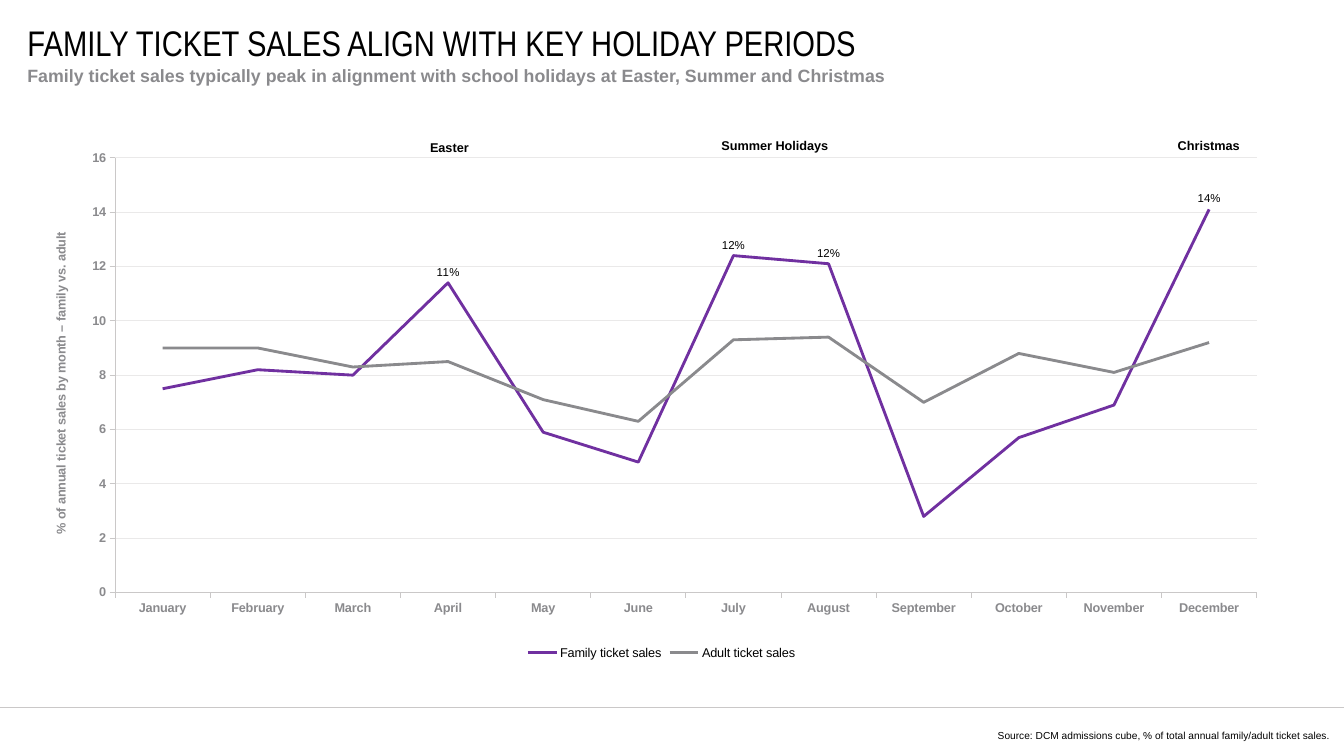
from dataclasses import dataclass

from lxml import etree
from pptx import Presentation
from pptx import util as u
from pptx.chart.data import CategoryChartData
from pptx.dml.color import RGBColor
from pptx.enum import chart as charts, shapes, text
from pptx.oxml import parse_xml
from pptx.oxml.ns import nsdecls, qn


@dataclass(frozen=True)
class Theme:
    black: str = "000000"
    grey: str = "8A8A8D"
    purple: str = "7030A0"
    rule: str = "CAC8C8"
    grid: str = "EAE9E9"
    body_font: str = "Arial"
    title_font: str = "Arial Narrow"
    title: float = 28
    subtitle: float = 14
    label: float = 10
    point_label: float = 9
    source: float = 8


THEME = Theme()
WIDTH, HEIGHT = 1058.4, 595.44
MARGIN = 21.6

MONTHS = ["January", "February", "March", "April", "May", "June", "July",
          "August", "September", "October", "November", "December"]
SALES = {
    "Family ticket sales": (
        THEME.purple, [7.5, 8.2, 8, 11.4, 5.9, 4.8, 12.4, 12.1, 2.8, 5.7, 6.9, 14.1]),
    "Adult ticket sales": (
        THEME.grey, [9, 9, 8.3, 8.5, 7.1, 6.3, 9.3, 9.4, 7, 8.8, 8.1, 9.2]),
}
PEAK_MONTHS = ["April", "July", "August", "December"]
# text, left, top, width
HOLIDAYS = [("Easter", 328.3, 106.6, 51.1),
            ("Summer Holidays", 552.2, 105.1, 115.9),
            ("Christmas", 914.4, 105.1, 74.9)]


def style_font(font, size=THEME.label, color=THEME.black, bold=False,
               name=THEME.body_font):
    font.size = u.Pt(size)
    font.name = name
    font.bold = bold
    font.color.rgb = RGBColor.from_string(color)


def style_line(line, color, width):
    line.color.rgb = RGBColor.from_string(color)
    line.width = u.Pt(width)


def write_text(frame, content, align=text.PP_ALIGN.LEFT,
               anchor=text.MSO_ANCHOR.TOP, spacing=None, wrap=True,
               inset=(0, 0), **font):
    """Fill a text frame with one paragraph; inset is (sides, top and bottom)."""
    frame.auto_size = text.MSO_AUTO_SIZE.NONE
    frame.word_wrap = wrap
    frame.vertical_anchor = anchor
    frame.margin_left = frame.margin_right = u.Pt(inset[0])
    frame.margin_top = frame.margin_bottom = u.Pt(inset[1])
    para = frame.paragraphs[0]
    para.alignment = align
    if spacing:
        para.line_spacing = u.Pt(spacing)
    span = para.add_run()
    span.text = content
    style_font(span.font, **font)


def place_plot(chart, **edges):
    """Fix the inner plot area, in fractions of the chart."""
    plot_area = chart._chartSpace.chart.plotArea
    for layout in plot_area.findall(qn("c:layout")):
        plot_area.remove(layout)
    modes = '<c:xMode val="edge"/><c:yMode val="edge"/>'
    sizes = "".join(f'<c:{key} val="{value}"/>' for key, value in edges.items())
    plot_area.insert(0, parse_xml(
        f'<c:layout {nsdecls("c")}><c:manualLayout><c:layoutTarget val="inner"/>'
        f"{modes}{sizes}</c:manualLayout></c:layout>"))


class SlideBuilder:
    def __init__(self, deck, theme):
        self.theme = theme
        self.page = deck.slides.add_slide(deck.slide_layouts[5])

    def title(self, content, left, top, width, height):
        box = self.page.shapes.title
        box.left, box.top, box.width, box.height = map(
            u.Pt, (left, top, width, height))
        write_text(box.text_frame, content, anchor=text.MSO_ANCHOR.MIDDLE,
                   wrap=False, size=self.theme.title, name=self.theme.title_font)

    def label(self, content, left, top, width, height, **style):
        box = self.page.shapes.add_textbox(*map(u.Pt, (left, top, width, height)))
        write_text(box.text_frame, content, **style)

    def rule(self, top):
        line = self.page.shapes.add_connector(
            shapes.MSO_CONNECTOR.STRAIGHT, 0, u.Pt(top), u.Pt(WIDTH), u.Pt(top))
        style_line(line.line, self.theme.rule, 0.5)
        etree.SubElement(line._element.spPr, qn("a:effectLst"))

    def line_chart(self, left, top, width, height):
        data = CategoryChartData(number_format="0")
        data.categories = MONTHS
        for name, (_, values) in SALES.items():
            data.add_series(name, values)
        chart = self.page.shapes.add_chart(
            charts.XL_CHART_TYPE.LINE, *map(u.Pt, (left, top, width, height)),
            data).chart
        chart.has_title = False
        style_font(chart.font)
        chart.plots[0].vary_by_categories = False
        chart.has_legend = True
        chart.legend.position = charts.XL_LEGEND_POSITION.BOTTOM
        chart.legend.include_in_layout = False
        style_font(chart.legend.font)
        place_plot(chart, x=0.053, y=0.024, w=0.934, h=0.839)
        self.axes(chart)
        for series, (color, _) in zip(chart.plots[0].series, SALES.values()):
            series.smooth = False
            style_line(series.format.line, color, 2.25)
        self.peak_labels(chart.plots[0].series[0])

    def axes(self, chart):
        for axis in (chart.category_axis, chart.value_axis):
            axis.major_tick_mark = charts.XL_TICK_MARK.OUTSIDE
            axis.minor_tick_mark = charts.XL_TICK_MARK.NONE
            style_font(axis.tick_labels.font, color=self.theme.grey, bold=True)
            style_line(axis.format.line, self.theme.rule, 0.75)
        axis = chart.value_axis
        axis.minimum_scale, axis.maximum_scale, axis.major_unit = 0, 16, 2
        axis.tick_labels.number_format = "0"
        axis.tick_labels.number_format_is_linked = False
        axis.has_major_gridlines = True
        style_line(axis.major_gridlines.format.line, self.theme.grid, 0.75)
        frame = axis.axis_title.text_frame
        span = frame.paragraphs[0].add_run()
        span.text = "% of annual ticket sales by month – family vs. adult"
        style_font(span.font, color=self.theme.grey, bold=True)
        frame._txBody.find(qn("a:bodyPr")).set("rot", "-5400000")

    def peak_labels(self, series):
        values = list(series.values)
        for month in PEAK_MONTHS:
            index = MONTHS.index(month)
            label = series.points[index].data_label
            span = label.text_frame.paragraphs[0].add_run()
            span.text = f"{values[index]:.0f}%"
            style_font(span.font, size=self.theme.point_label)
            label.position = charts.XL_LABEL_POSITION.ABOVE


def main():
    deck = Presentation()
    deck.slide_width, deck.slide_height = u.Pt(WIDTH), u.Pt(HEIGHT)
    slide = SlideBuilder(deck, THEME)
    slide.rule(556.8)
    slide.title("FAMILY TICKET SALES ALIGN WITH KEY HOLIDAY PERIODS",
                MARGIN, 21.6, 978, 23)
    slide.label("Family ticket sales typically peak in alignment with school "
                "holidays at Easter, Summer and Christmas",
                MARGIN, 52.6, 978, 34.6, spacing=15,
                size=THEME.subtitle, color=THEME.grey, bold=True)
    slide.label("Source: DCM admissions cube, % of total annual family/adult "
                "ticket sales.", 719.3, 569.5, 328.3, 9.4, spacing=19,
                align=text.PP_ALIGN.RIGHT, anchor=text.MSO_ANCHOR.MIDDLE,
                size=THEME.source)
    slide.line_chart(39.6, 114.5, 962.6, 408.2)
    for name, left, top, width in HOLIDAYS:
        slide.label(name, left, top, width, 19.4, inset=(7.2, 3.6),
                    align=text.PP_ALIGN.CENTER, bold=True)
    deck.save("out.pptx")


if __name__ == "__main__":
    main()
